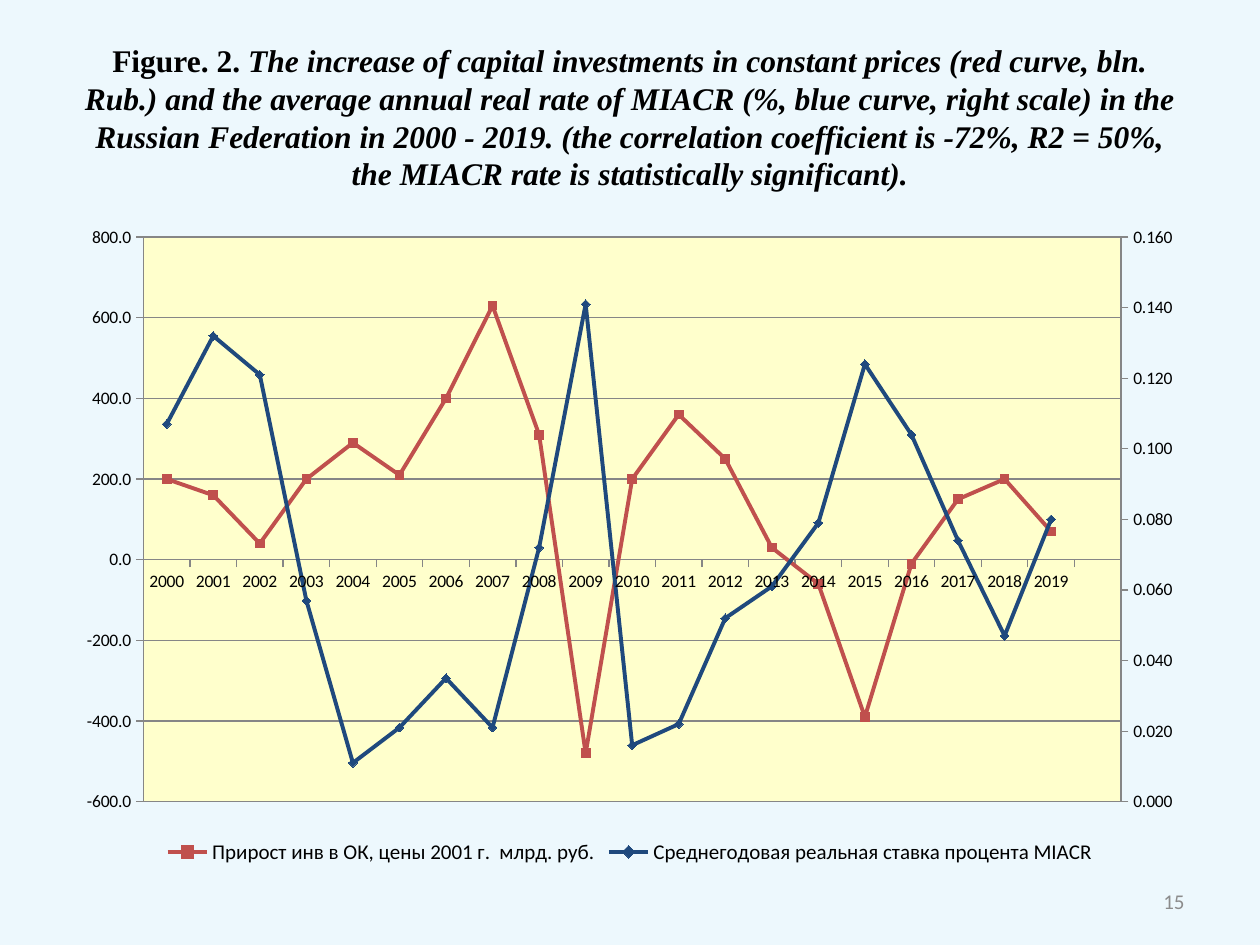
from copy import deepcopy

from pptx import Presentation
from pptx.chart.data import CategoryChartData
from pptx.dml.color import RGBColor
from pptx.enum.chart import XL_CHART_TYPE, XL_LEGEND_POSITION, XL_MARKER_STYLE, XL_TICK_MARK
from pptx.enum.text import MSO_ANCHOR, PP_ALIGN
from pptx.oxml import parse_xml
from pptx.oxml.ns import nsdecls, qn
from pptx.util import Inches, Pt

GRAY = "868686"
YEARS = [str(year) for year in range(2000, 2020)] + [""]
INVESTMENT = [200, 160, 40, 200, 290, 210, 400, 630, 310, -480, 200,
              360, 250, 30, -60, -390, -10, 150, 200, 70, None]
RATE = [0.107, 0.132, 0.121, 0.057, 0.011, 0.021, 0.035, 0.021, 0.072, 0.141, 0.016,
        0.022, 0.052, 0.061, 0.079, 0.124, 0.104, 0.074, 0.047, 0.08, None]
CAPTION = (
    "The increase of capital investments in constant prices (red curve, bln. Rub.) "
    "and the average annual real rate of MIACR (%, blue curve, right scale) in the "
    "Russian Federation in 2000 - 2019. (the correlation coefficient is -72%, "
    "R2 = 50%, the MIACR rate is statistically significant)."
)


def color(value):
    return RGBColor.from_string(value)


def style_font(font, name, size, tint):
    font.name = name
    font.size = Pt(size)
    font.color.rgb = color(tint)


def style_line(line, tint, width):
    line.color.rgb = color(tint)
    line.width = Pt(width)


def add_title(page):
    title = page.shapes.title
    title.left, title.top = Inches(0.5), Inches(0.3)
    title.width, title.height = Inches(9), Inches(1.25)
    title.text_frame.vertical_anchor = MSO_ANCHOR.MIDDLE
    para = title.text_frame.paragraphs[0]
    para.alignment = PP_ALIGN.CENTER
    for text, italic in (("Figure. 2. ", False), (CAPTION, True)):
        span = para.add_run()
        span.text = text
        style_font(span.font, "Times New Roman", 18, "000000")
        span.font.bold = True
        span.font.italic = italic


def add_page_number(page):
    box = page.shapes.add_textbox(Inches(7.17), Inches(6.95), Inches(2.33), Inches(0.4))
    frame = box.text_frame
    frame.word_wrap = True
    frame.vertical_anchor = MSO_ANCHOR.MIDDLE
    frame.text = "15"
    para = frame.paragraphs[0]
    para.alignment = PP_ALIGN.RIGHT
    style_font(para.runs[0].font, "Calibri", 12, "8C8C8C")


def style_series(series, tint, marker):
    series.smooth = False
    style_line(series.format.line, tint, 2.25)
    series.marker.style = marker
    series.marker.size = 5
    series.marker.format.fill.solid()
    series.marker.format.fill.fore_color.rgb = color(tint)
    style_line(series.marker.format.line, tint, 0.75)


def style_axes(chart):
    for axis in (chart.category_axis, chart.value_axis):
        axis.major_tick_mark = XL_TICK_MARK.OUTSIDE
        axis.minor_tick_mark = XL_TICK_MARK.NONE
        style_line(axis.format.line, GRAY, 0.75)
    values = chart.value_axis
    values.minimum_scale, values.maximum_scale, values.major_unit = -600, 800, 200
    values.has_major_gridlines = True
    style_line(values.major_gridlines.format.line, GRAY, 0.75)
    values.tick_labels.number_format = "0.0"
    values.tick_labels.number_format_is_linked = False


def set_value(element, tag, value):
    element.find(".//" + qn(tag)).set("val", value)


def move_to_right_axis(chart):
    left_plot = chart.plots[0]._element
    left_categories = chart.category_axis._element
    left_values = chart.value_axis._element
    plot, categories, values = map(deepcopy, (left_plot, left_categories, left_values))
    left_plot.remove(left_plot.findall(qn("c:ser"))[1])
    plot.remove(plot.findall(qn("c:ser"))[0])
    for reference, number in zip(plot.findall(qn("c:axId")), ("5001", "5002")):
        reference.set("val", number)
    for axis, own, other in ((categories, "5001", "5002"), (values, "5002", "5001")):
        set_value(axis, "c:axId", own)
        set_value(axis, "c:crossAx", other)
    set_value(categories, "c:delete", "1")
    values.remove(values.find(qn("c:majorGridlines")))
    for tag, value in (("c:axPos", "r"), ("c:crosses", "max"), ("c:min", "0"),
                       ("c:max", "0.16"), ("c:majorUnit", "0.02")):
        set_value(values, tag, value)
    values.find(qn("c:numFmt")).set("formatCode", "0.000")
    left_plot.addnext(plot)
    left_values.addnext(values)
    values.addnext(categories)
    return categories


def style_plot_area(last_axis):
    area = last_axis.getparent()
    for layout in area.findall(qn("c:layout")):
        area.remove(layout)
    area.insert(0, parse_xml(
        f'<c:layout {nsdecls("c")}><c:manualLayout><c:layoutTarget val="inner"/>'
        '<c:xMode val="edge"/><c:yMode val="edge"/><c:x val="0.07"/><c:y val="0.035"/>'
        '<c:w val="0.864"/><c:h val="0.862"/></c:manualLayout></c:layout>'))
    last_axis.addnext(parse_xml(
        f'<c:spPr {nsdecls("c", "a")}><a:solidFill><a:srgbClr val="FFFFCC"/></a:solidFill>'
        f'<a:ln w="9525"><a:solidFill><a:srgbClr val="{GRAY}"/></a:solidFill></a:ln></c:spPr>'))


def add_investment_chart(page):
    data = CategoryChartData()
    data.categories = YEARS
    data.add_series("Прирост инв в ОК, цены 2001 г.  млрд. руб.", INVESTMENT)
    data.add_series("Среднегодовая реальная ставка процента MIACR", RATE)
    chart = page.shapes.add_chart(XL_CHART_TYPE.LINE_MARKERS, Inches(0.51), Inches(1.7),
                                  Inches(8.98), Inches(5.2), data).chart
    style_font(chart.font, "Calibri", 10, "000000")
    chart.has_title = False
    chart.has_legend = True
    chart.legend.position = XL_LEGEND_POSITION.BOTTOM
    chart.legend.include_in_layout = False
    style_font(chart.legend.font, "Calibri", 12, "000000")
    chart.plots[0].vary_by_categories = False
    investment, rate = chart.plots[0].series
    style_series(investment, "C0504D", XL_MARKER_STYLE.SQUARE)
    style_series(rate, "1F497D", XL_MARKER_STYLE.DIAMOND)
    style_axes(chart)
    style_plot_area(move_to_right_axis(chart))


def main():
    deck = Presentation()
    deck.slide_width, deck.slide_height = Inches(10), Inches(7.5)
    page = deck.slides.add_slide(deck.slide_layouts[5])
    page.background.fill.solid()
    page.background.fill.fore_color.rgb = color("EDF8FD")
    add_title(page)
    add_investment_chart(page)
    add_page_number(page)
    deck.save("out.pptx")


if __name__ == "__main__":
    main()
